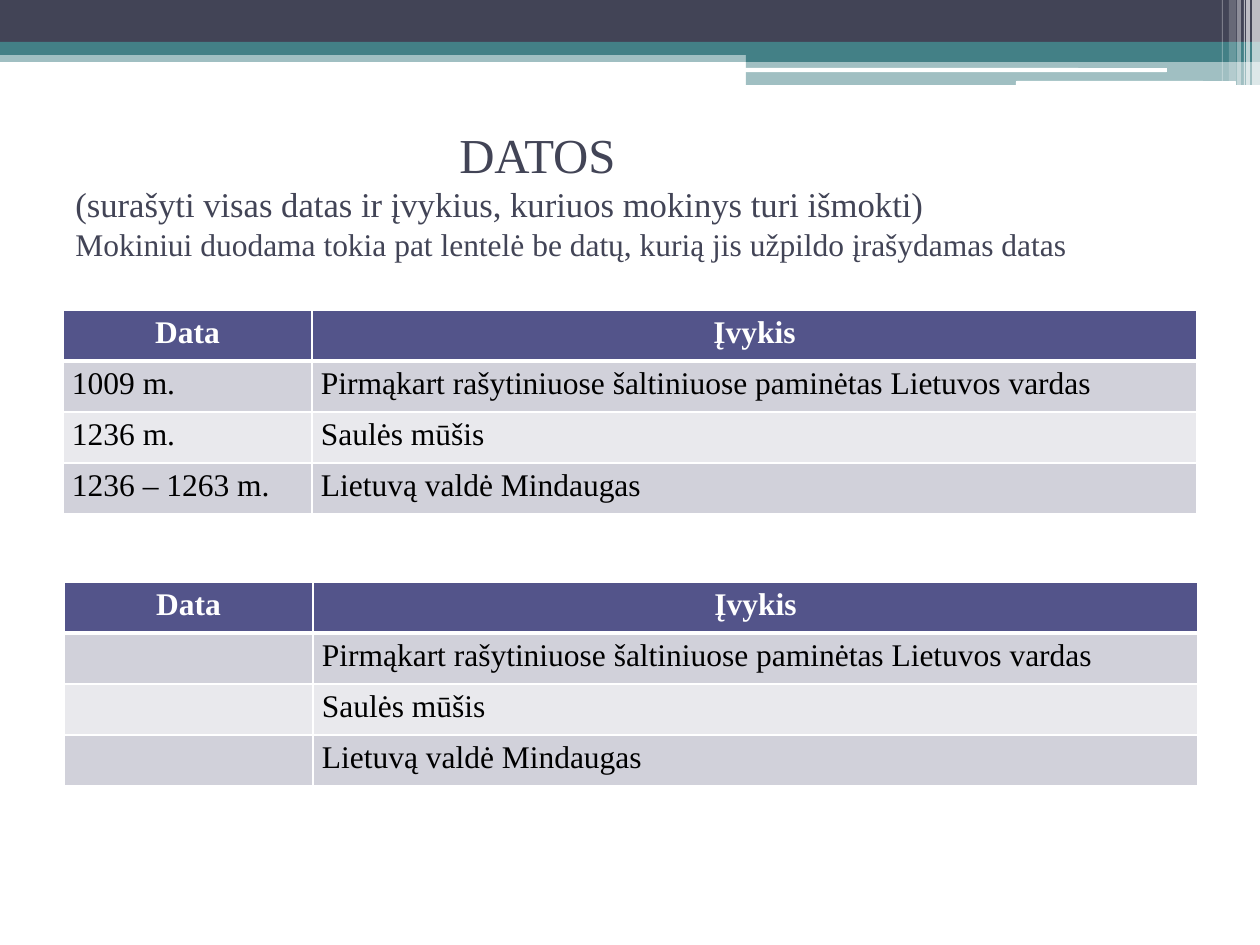
from lxml import etree
from pptx import Presentation
from pptx import util as u
from pptx.dml.color import RGBColor
from pptx.enum import shapes, text
from pptx.oxml import ns

FONT = "Times New Roman"
WHITE, BLACK, DARK, TEAL = "FFFFFF", "000000", "424456", "438086"
HEAD, BANDS = "53548A", ("D1D1DA", "E9E9ED")


def px(n):
    return u.Emu(round(n * 914400 / 126))


def color(c):
    return RGBColor.from_string(c)


def sub(parent, tag, **attrs):
    return etree.SubElement(parent, ns.qn(tag), attrs)


def add_run(p, words, size, c, bold=False):
    r = p.add_run()
    r.text = words
    r.font.name, r.font.size, r.font.bold = FONT, u.Pt(size), bold
    r.font.color.rgb = color(c)


def add_block(s, x, y, w, h, fill, alpha=100, rounded=False):
    kind = shapes.MSO_SHAPE.ROUNDED_RECTANGLE if rounded else shapes.MSO_SHAPE.RECTANGLE
    sp = s.shapes.add_shape(kind, px(x), px(y), px(w), px(h))
    sp.shadow.inherit = False
    sp.line.fill.background()
    sp.fill.solid()
    sp.fill.fore_color.rgb = color(fill)
    if alpha < 100:
        clr = sp._element.spPr.find(".//" + ns.qn("a:srgbClr"))
        sub(clr, "a:alpha", val=str(alpha * 1000))


def add_banner(s, x, y, w):
    # Full-width bands
    add_block(s, x, y + 50, w, 12, TEAL, 50)
    add_block(s, x, y, w, 42, DARK)
    add_block(s, x, y + 42, w, 13, TEAL)
    # Step at the right
    step = 746
    add_block(s, x + step, y + 49, w - step, 13, TEAL)
    add_block(s, x + step, y + 62, w - step, 23, TEAL, 50)
    # White slots
    add_block(s, x + 745, y + 68, 422, 4, WHITE, rounded=True)
    add_block(s, x + 1016, y + 81, 220, 5, WHITE, rounded=True)
    # Vertical stripes: distance from right edge, width, height, opacity
    for back, sw, sh, alpha in ((8, 8, 85, 65), (14, 4, 85, 65), (16, 1, 85, 60),
                                (23, 4, 85, 40), (31, 7, 81, 20), (38, 1, 81, 30)):
        add_block(s, x + w - back, y, sw, sh, WHITE, alpha)


def add_title(s, x, y, w, h):
    tf = s.shapes.add_textbox(px(x), px(y), px(w), px(h)).text_frame
    tf.word_wrap = True
    tf.vertical_anchor = text.MSO_ANCHOR.MIDDLE
    tf.margin_top, tf.margin_bottom = 0, px(75)
    lines = (("DATOS", 27.9, 384),
             ("(surašyti visas datas ir įvykius, kuriuos mokinys turi išmokti)", 19.8, 0),
             ("Mokiniui duodama tokia pat lentelė be datų, kurią jis užpildo įrašydamas datas", 18, 0))
    for i, (words, size, indent) in enumerate(lines):
        p = tf.add_paragraph() if i else tf.paragraphs[0]
        if indent:
            p._p.get_or_add_pPr().set("indent", str(px(indent)))
        add_run(p, words, size, DARK)


def set_borders(cell, bottom):
    tcPr = cell._tc.get_or_add_tcPr()
    for side, width in (("L", 1), ("R", 1), ("T", 1), ("B", bottom)):
        ln = sub(tcPr, "a:ln" + side, w=str(u.Pt(width)))
        sub(sub(ln, "a:solidFill"), "a:srgbClr", val=WHITE)


def add_dates_table(s, x, y, rows):
    widths, row_h = (249, 885), 51
    tbl = s.shapes.add_table(len(rows), len(widths), px(x), px(y),
                             px(sum(widths)), px(row_h * len(rows))).table
    tbl.first_row = tbl.horz_banding = False
    for col, w in zip(tbl.columns, widths):
        col.width = px(w)
    for i, row in enumerate(rows):
        tbl.rows[i].height = px(row_h)
        head = i == 0
        for j, words in enumerate(row):
            cell = tbl.cell(i, j)
            cell.margin_left = cell.margin_right = px(9)
            cell.margin_top = cell.margin_bottom = 0
            set_borders(cell, 3 if head else 1)
            cell.fill.solid()
            cell.fill.fore_color.rgb = color(HEAD if head else BANDS[(i - 1) % 2])
            if words:
                p = cell.text_frame.paragraphs[0]
                p.alignment = text.PP_ALIGN.CENTER if head else text.PP_ALIGN.JUSTIFY
                p.line_spacing = 1.15
                add_run(p, words, 18, WHITE if head else BLACK, head)


def main():
    prs = Presentation()
    prs.slide_width, prs.slide_height = px(1260), px(945)
    s = prs.slides.add_slide(prs.slide_layouts[6])
    add_banner(s, 0, 0, 1260)
    add_title(s, 63, 157, 1134, 148)
    # Filled-in table, then the same one with the dates left out
    header = ("Data", "Įvykis")
    events = (("1009 m.", "Pirmąkart rašytiniuose šaltiniuose paminėtas Lietuvos vardas"),
              ("1236 m.", "Saulės mūšis"),
              ("1236 – 1263 m.", "Lietuvą valdė Mindaugas"))
    add_dates_table(s, 63, 310, [header, *events])
    add_dates_table(s, 64, 582, [header, *(("", event) for _, event in events)])
    prs.save("out.pptx")


if __name__ == "__main__":
    main()
